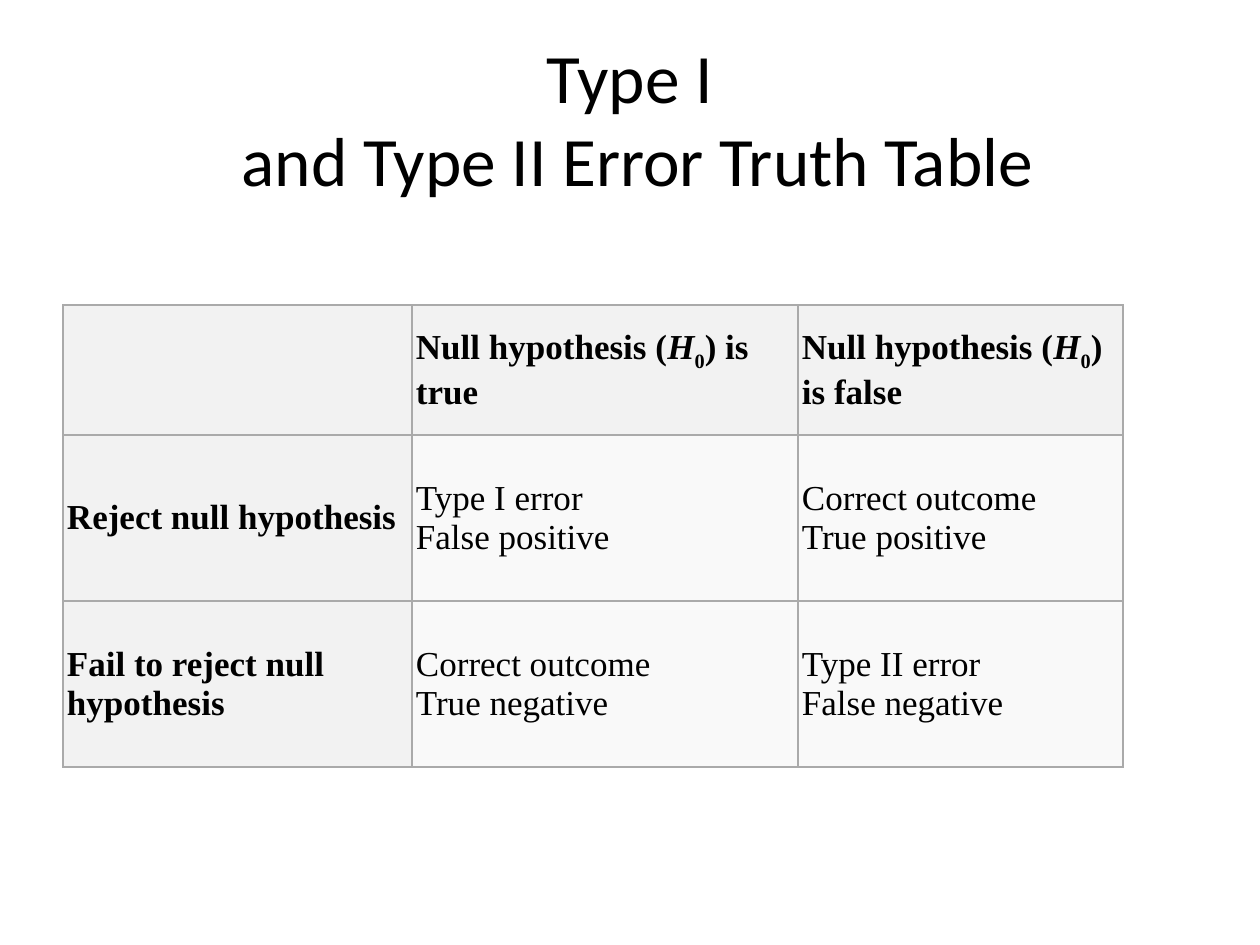
from lxml.etree import SubElement
from pptx import Presentation
from pptx.dml.color import RGBColor
from pptx.enum.text import MSO_ANCHOR as Anchor, PP_ALIGN as Align
from pptx.oxml.ns import qn
from pptx.util import Pt

EMU_PER_PX = 914400 / 126
BLACK = RGBColor(0x00, 0x00, 0x00)
HEADER_FILL = RGBColor(0xF2, 0xF2, 0xF2)
BODY_FILL = RGBColor(0xF9, 0xF9, 0xF9)
BORDER = RGBColor(0xAA, 0xAA, 0xAA)

SLIDE_SIZE = (1260, 945)
COLUMN_WIDTHS = (349, 386, 325)
ROW_HEIGHTS = (130, 166, 166)


def px(length):
    return round(length * EMU_PER_PX)


def null_hypothesis(state):
    """Header runs as (text, italic, subscript)."""
    return [("Null hypothesis (", False, False), ("H", True, False),
            ("0", False, True), (f") is {state}", False, False)]


def plain(text):
    return [(text, False, False)]


TRUTH_TABLE = [
    [[], null_hypothesis("true"), null_hypothesis("false")],
    [plain("Reject null hypothesis"),
     plain("Type I error\nFalse positive"),
     plain("Correct outcome\nTrue positive")],
    [plain("Fail to reject null hypothesis"),
     plain("Correct outcome\nTrue negative"),
     plain("Type II error\nFalse negative")],
]


class SlideBuilder:
    title_font, title_size = "Calibri", 39.6
    table_font, table_size = "Times New Roman", 20
    cell_margin = 4

    def __init__(self, slide):
        self.slide = slide

    def add_runs(self, paragraph, runs, font_name, size, bold=False):
        for text, italic, subscript in runs:
            for index, line in enumerate(text.split("\n")):
                if index:
                    paragraph.add_line_break()
                run = paragraph.add_run()
                run.text = line
                font = run.font
                font.name, font.size = font_name, Pt(size)
                font.bold, font.italic = bold, italic
                font.color.rgb = BLACK
                if subscript:
                    font._element.set("baseline", "-25000")

    def title(self, text, left, top, width, height):
        box = self.slide.shapes.add_textbox(px(left), px(top), px(width), px(height))
        frame = box.text_frame
        frame.word_wrap = True
        frame.vertical_anchor = Anchor.MIDDLE
        paragraph = frame.paragraphs[0]
        paragraph.alignment = Align.CENTER
        self.add_runs(paragraph, plain(text), self.title_font, self.title_size)

    def table(self, rows, left, top, widths, heights):
        grid = self.slide.shapes.add_table(
            len(heights), len(widths), px(left), px(top),
            px(sum(widths)), px(sum(heights))).table
        for column, width in zip(grid.columns, widths):
            column.width = px(width)
        for row, height in zip(grid.rows, heights):
            row.height = px(height)
        for r, row in enumerate(rows):
            for c, runs in enumerate(row):
                self.cell(grid.cell(r, c), runs, r == 0 or c == 0)

    def cell(self, cell, runs, is_header):
        self.borders(cell)
        cell.fill.solid()
        cell.fill.fore_color.rgb = HEADER_FILL if is_header else BODY_FILL
        cell.vertical_anchor = Anchor.MIDDLE
        margin = px(self.cell_margin)
        cell.margin_left = cell.margin_right = margin
        cell.margin_top = cell.margin_bottom = margin
        self.add_runs(cell.text_frame.paragraphs[0], runs,
                      self.table_font, self.table_size, is_header)

    def borders(self, cell):
        """Draw all four sides; must run before the cell fill is set."""
        properties = cell._tc.get_or_add_tcPr()
        for side in ("a:lnL", "a:lnR", "a:lnT", "a:lnB"):
            line = SubElement(properties, qn(side), w=str(Pt(1)))
            fill = SubElement(line, qn("a:solidFill"))
            SubElement(fill, qn("a:srgbClr"), val=str(BORDER))


def main():
    presentation = Presentation()
    presentation.slide_width, presentation.slide_height = map(px, SLIDE_SIZE)
    blank = presentation.slide_layouts[6]
    builder = SlideBuilder(presentation.slides.add_slide(blank))
    builder.title("Type I\n and Type II Error Truth Table", 63, 38, 1134, 158)
    builder.table(TRUTH_TABLE, 63, 305, COLUMN_WIDTHS, ROW_HEIGHTS)
    presentation.save("out.pptx")


if __name__ == "__main__":
    main()
